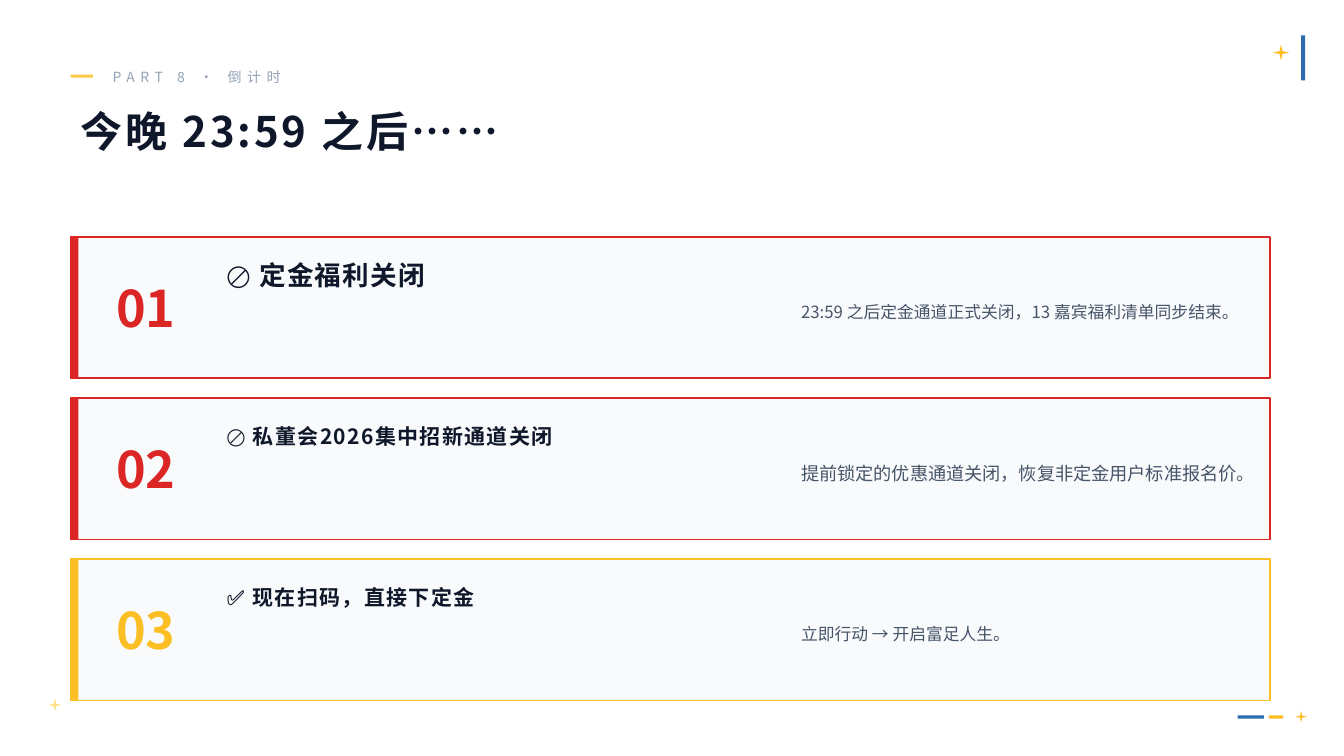
from lxml import etree
from pptx import Presentation
from pptx import util as u
from pptx.dml import color
from pptx.enum import shapes, text
from pptx.oxml import ns

FACE = "Noto Sans CJK SC"
BLUE, GOLD, PALE_GOLD, RED = "2B6CB0", "FBBF24", "FFE082", "DC2626"
INK, SLATE, MIST, PANEL = "0F172A", "475569", "94A3B8", "F8FAFC"
RECT = shapes.MSO_SHAPE.RECTANGLE
STAR = shapes.MSO_SHAPE.STAR_4_POINT
TOP, MIDDLE = text.MSO_ANCHOR.TOP, text.MSO_ANCHOR.MIDDLE
LEFT, CENTER = text.PP_ALIGN.LEFT, text.PP_ALIGN.CENTER

CARD_LEFT, CARD_TOP, CARD_WIDTH, CARD_HEIGHT, CARD_PITCH = 1.78, 5.97, 30.23, 3.56, 4.06
CARDS = [
    (RED, "🚫 定金福利关闭", 19, "23:59 之后定金通道正式关闭，13 嘉宾福利清单同步结束。", 12),
    (RED, "🚫 私董会2026集中招新通道关闭", 15, "提前锁定的优惠通道关闭，恢复非定金用户标准报名价。", 13),
    (GOLD, "✅ 现在扫码，直接下定金", 15, "立即行动 → 开启富足人生。", 12),
]
ORNAMENTS = [
    (RECT, (32.79, 0.89, 0.1, 1.14), BLUE),
    (STAR, (32.08, 1.12, 0.41, 0.41), GOLD),
    (RECT, (31.19, 18.03, 0.66, 0.08), BLUE),
    (RECT, (31.98, 18.03, 0.36, 0.08), GOLD),
    (STAR, (32.64, 17.91, 0.3, 0.3), GOLD),
    (STAR, (1.22, 17.6, 0.33, 0.33), PALE_GOLD),
]


def rgb(hex_value):
    """Turn a hex string into a colour."""
    return color.RGBColor.from_string(hex_value)


def lengths(box):
    """Turn left, top, width and height in centimetres into lengths."""
    return [u.Cm(value) for value in box]


def apply(target, values):
    """Set every attribute in the dict of format values."""
    for key, value in values.items():
        setattr(target, key, value)


def add_block(slide, kind, box, fill, outline=None):
    """Add a filled preset shape, with an outline if a colour is given."""
    block = slide.shapes.add_shape(kind, *lengths(box))
    block.shadow.inherit = False
    block.fill.solid()
    block.fill.fore_color.rgb = rgb(fill)
    if outline:
        block.line.color.rgb = rgb(outline)
        block.line.width = u.Pt(1)
    else:
        block.line.fill.background()
    return block


def write(frame, words, size, ink, bold=False, tracking=0, anchor=MIDDLE, align=LEFT, leading=1):
    """Write one formatted paragraph into a text frame."""
    apply(frame, {"word_wrap": True, "vertical_anchor": anchor,
                  "auto_size": text.MSO_AUTO_SIZE.NONE})
    paragraph = frame.paragraphs[0]
    apply(paragraph, {"alignment": align, "line_spacing": leading})
    run = paragraph.add_run()
    run.text = words
    apply(run.font, {"size": u.Pt(size), "bold": bold, "name": FACE})
    run.font.color.rgb = rgb(ink)
    properties = run.font._element
    etree.SubElement(properties, ns.qn("a:ea"), typeface=FACE)
    if tracking:
        properties.set("spc", str(tracking * 100))


def add_words(slide, box, words, size, ink, **style):
    """Add a text box holding one paragraph."""
    label = slide.shapes.add_textbox(*lengths(box))
    write(label.text_frame, words, size, ink, **style)


def add_header(slide):
    """Add the gold dash, the section label and the title."""
    dash = add_block(slide, RECT, (CARD_LEFT, 1.88, 0.56, 0.08), GOLD)
    tint = dash._element.spPr.find(".//" + ns.qn("a:srgbClr"))
    etree.SubElement(tint, ns.qn("a:alpha"), val="85000")
    add_words(slide, (2.59, 1.57, 20.32, 0.76), "PART 8 · 倒计时", 10, MIST, tracking=4)
    title = slide.shapes.title
    apply(title, dict(zip(("left", "top", "width", "height"),
                          lengths((CARD_LEFT, 2.54, 30.48, 2.54)))))
    write(title.text_frame, "今晚 23:59 之后……", 30, INK, bold=True, tracking=2, anchor=TOP)


def add_card(slide, index, accent, heading, heading_size, detail, detail_size):
    """Add one numbered card with its heading and detail."""
    top = CARD_TOP + index * CARD_PITCH
    add_block(slide, RECT, (CARD_LEFT, top, CARD_WIDTH, CARD_HEIGHT), PANEL, accent)
    add_block(slide, RECT, (CARD_LEFT, top, 0.2, CARD_HEIGHT), accent)
    add_words(slide, (2.41, top, 2.54, CARD_HEIGHT), f"{index + 1:02}", 36, accent,
              bold=True, align=CENTER)
    add_words(slide, (5.46, top + 0.25, 13.97, 1.4), heading, heading_size, INK,
              bold=True, tracking=1)
    add_words(slide, (19.94, top, 12.07, CARD_HEIGHT), detail, detail_size, SLATE, leading=1.45)


def main():
    """Build and save the slide."""
    deck = Presentation()
    apply(deck, {"slide_width": u.Cm(33.87), "slide_height": u.Cm(19.05)})
    slide = deck.slides.add_slide(deck.slide_layouts.get_by_name("Title Only"))
    for ornament in ORNAMENTS:
        add_block(slide, *ornament)
    add_header(slide)
    for index, card in enumerate(CARDS):
        add_card(slide, index, *card)
    deck.save("out.pptx")


if __name__ == "__main__":
    main()
